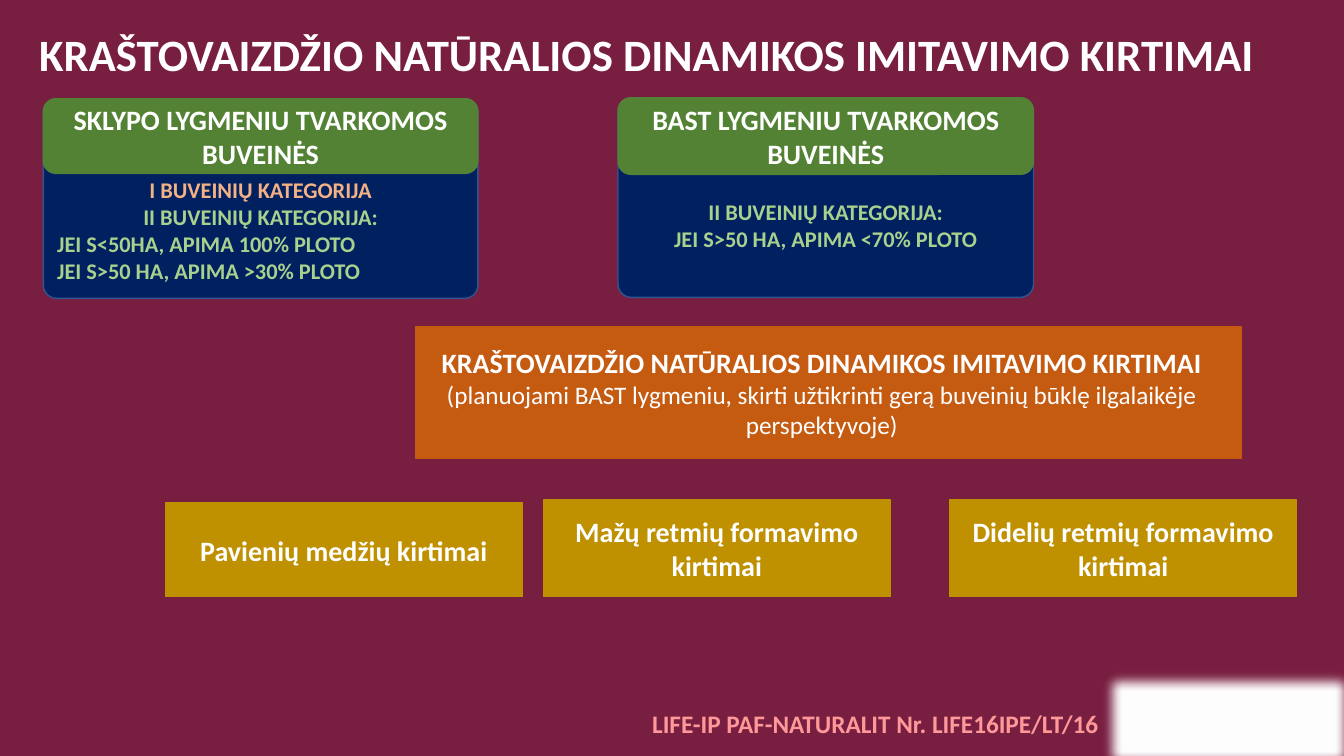
"""Build the slide on cuttings that imitate natural landscape dynamics."""
from dataclasses import dataclass
from typing import Any

from lxml.etree import SubElement
from pptx import Presentation
from pptx.dml.color import RGBColor as RGB
from pptx.enum.shapes import MSO_SHAPE as SHAPE
from pptx.enum.text import MSO_ANCHOR as ANCHOR, PP_ALIGN as ALIGN
from pptx.oxml.ns import qn
from pptx.util import Inches, Pt


@dataclass(frozen=True)
class Theme:
    """Colours and type sizes of the slide."""
    font: str = "Calibri"
    back: str = "781E40"
    white: str = "FFFFFF"
    footer: str = "FF9999"
    navy: str = "002060"
    navy_edge: str = "325491"
    green: str = "548235"
    orange: str = "C55A11"
    gold: str = "BF9000"
    peach: str = "F4B183"
    lime: str = "A9D18E"
    title_size: int = 32
    head_size: int = 20
    note_size: int = 18
    body_size: int = 16


@dataclass(frozen=True)
class Line:
    """One paragraph with its format."""
    text: str
    size: int
    color: str
    bold: bool = True
    align: ALIGN = ALIGN.CENTER
    spacing: float = 1.0
    right: float = 0


@dataclass(frozen=True)
class Block:
    """One filled box with its text."""
    x: float
    y: float
    w: float
    h: float
    fill: str
    edge: str
    lines: tuple[Line, ...]
    corner: float = 0
    top: float = 0.05


@dataclass(frozen=True)
class Level:
    """One habitat card: green heading over a navy body."""
    x: float
    y: float
    w: float
    head_h: float
    top: float
    heading: str
    body: tuple[Line, ...]


T = Theme()
CARD_H = 1.98


def apply(obj: Any, values: dict[str, Any]) -> None:
    """Set each named attribute of an object."""
    for name, value in values.items():
        setattr(obj, name, value)


def head(text: str, right: float = 0) -> Line:
    """Return a white bold box heading."""
    return Line(text, T.head_size, T.white, right=right)


def body(text: str, color: str = T.lime, align: ALIGN = ALIGN.CENTER) -> Line:
    """Return a line of card body text."""
    return Line(text, T.body_size, color, align=align)


def write(s: Any, lines: tuple[Line, ...], **frame: Any) -> None:
    """Fill a shape with formatted paragraphs."""
    tf = s.text_frame
    apply(tf, {"word_wrap": True, "vertical_anchor": ANCHOR.MIDDLE, **frame})
    for i, line in enumerate(lines):
        p = tf.add_paragraph() if i else tf.paragraphs[0]
        apply(p, {"alignment": line.align, "line_spacing": line.spacing})
        if line.right:
            p._p.get_or_add_pPr().set("marR", str(Inches(line.right)))
        r = p.add_run()
        r.text = line.text
        apply(r.font, {"name": T.font, "size": Pt(line.size), "bold": line.bold})
        r.font.color.rgb = RGB.from_string(line.color)


def add_box(shapes: Any, kind: SHAPE, b: Block) -> Any:
    """Draw a filled box and return it."""
    s = shapes.add_shape(kind, *map(Inches, (b.x, b.y, b.w, b.h)))
    s.shadow.inherit = False
    s.fill.solid()
    s.fill.fore_color.rgb = RGB.from_string(b.fill)
    s.line.color.rgb = RGB.from_string(b.edge)
    s.line.width = Pt(1)
    if kind == SHAPE.ROUNDED_RECTANGLE:
        s.adjustments[0] = b.corner
    if b.lines:
        write(s, b.lines, margin_top=Inches(b.top))
    return s


def add_label(shapes: Any, at: tuple[float, ...], line: Line, **frame: Any) -> None:
    """Draw a text box with a single line."""
    write(shapes.add_textbox(*map(Inches, at)), (line,), **frame)


def soften(s: Any, radius: float) -> None:
    """Blur the edges of a shape."""
    effects = s._element.spPr.find(qn("a:effectLst"))
    SubElement(effects, qn("a:softEdge")).set("rad", str(Inches(radius)))


def card(v: Level) -> tuple[Block, Block]:
    """Return the body and heading boxes of a habitat card."""
    return (
        Block(v.x, v.y, v.w, CARD_H, T.navy, T.navy_edge, v.body, 0.066, v.top),
        Block(v.x, v.y, v.w, v.head_h, T.green, T.green, (head(v.heading),), 0.167),
    )


LEVELS = (
    Level(0.43, 0.98, 4.31, 0.74, 0.68, "SKLYPO LYGMENIU TVARKOMOS BUVEINĖS", (
        body("I BUVEINIŲ KATEGORIJA", T.peach),
        body("II BUVEINIŲ KATEGORIJA:"),
        body("JEI S<50HA, APIMA 100% PLOTO", align=ALIGN.LEFT),
        body("JEI S>50 HA, APIMA >30% PLOTO", align=ALIGN.LEFT),
    )),
    Level(6.13, 0.97, 4.12, 0.76, 0.59, "BAST LYGMENIU TVARKOMOS BUVEINĖS", (
        body("II BUVEINIŲ KATEGORIJA:"),
        body("JEI S>50 HA, APIMA <70% PLOTO"),
    )),
)
TITLE = "KRAŠTOVAIZDŽIO NATŪRALIOS DINAMIKOS IMITAVIMO KIRTIMAI"
SUMMARY = Block(4.12, 3.24, 8.19, 1.31, T.orange, T.orange, (
    head(TITLE, right=0.13),
    Line("(planuojami BAST lygmeniu, skirti užtikrinti gerą buveinių būklę "
         "ilgalaikėje perspektyvoje)", T.note_size, T.white, bold=False),
))
CUTTINGS = (
    (1.64, 4.99, 3.54, "Pavienių medžių kirtimai"),
    (5.39, 4.96, 3.44, "Mažų retmių formavimo kirtimai"),
    (9.42, 4.96, 3.44, "Didelių retmių formavimo kirtimai"),
)
CUTTINGS_BOTTOM = 5.92


def main() -> None:
    """Build and save the slide."""
    prs = Presentation()
    apply(prs, {"slide_width": Inches(13.33), "slide_height": Inches(7.5)})
    slide = prs.slides.add_slide(prs.slide_layouts[6])
    slide.background.fill.solid()
    slide.background.fill.fore_color.rgb = RGB.from_string(T.back)
    shapes = slide.shapes

    panel = Block(10.87, 6.6, 2.63, 1.11, T.white, T.white, ())
    soften(add_box(shapes, SHAPE.RECTANGLE, panel), 0.14)
    add_label(shapes, (6.37, 6.98, 4.67, 0.4),
              Line("LIFE-IP PAF-NATURALIT Nr. LIFE16IPE/LT/16", T.note_size,
                   T.footer, align=ALIGN.LEFT),
              word_wrap=False, vertical_anchor=ANCHOR.TOP)
    add_label(shapes, (0.29, 0.06, 12.61, 1.01),
              Line(TITLE, T.title_size, T.white, align=ALIGN.LEFT, spacing=0.9))

    cards = [b for v in LEVELS for b in card(v)]
    cuttings = [Block(x, y, w, CUTTINGS_BOTTOM - y, T.gold, T.gold, (head(text),))
                for x, y, w, text in CUTTINGS]
    for b in (*cards, SUMMARY, *cuttings):
        add_box(shapes, SHAPE.ROUNDED_RECTANGLE, b)
    prs.save("out.pptx")


if __name__ == "__main__":
    main()
